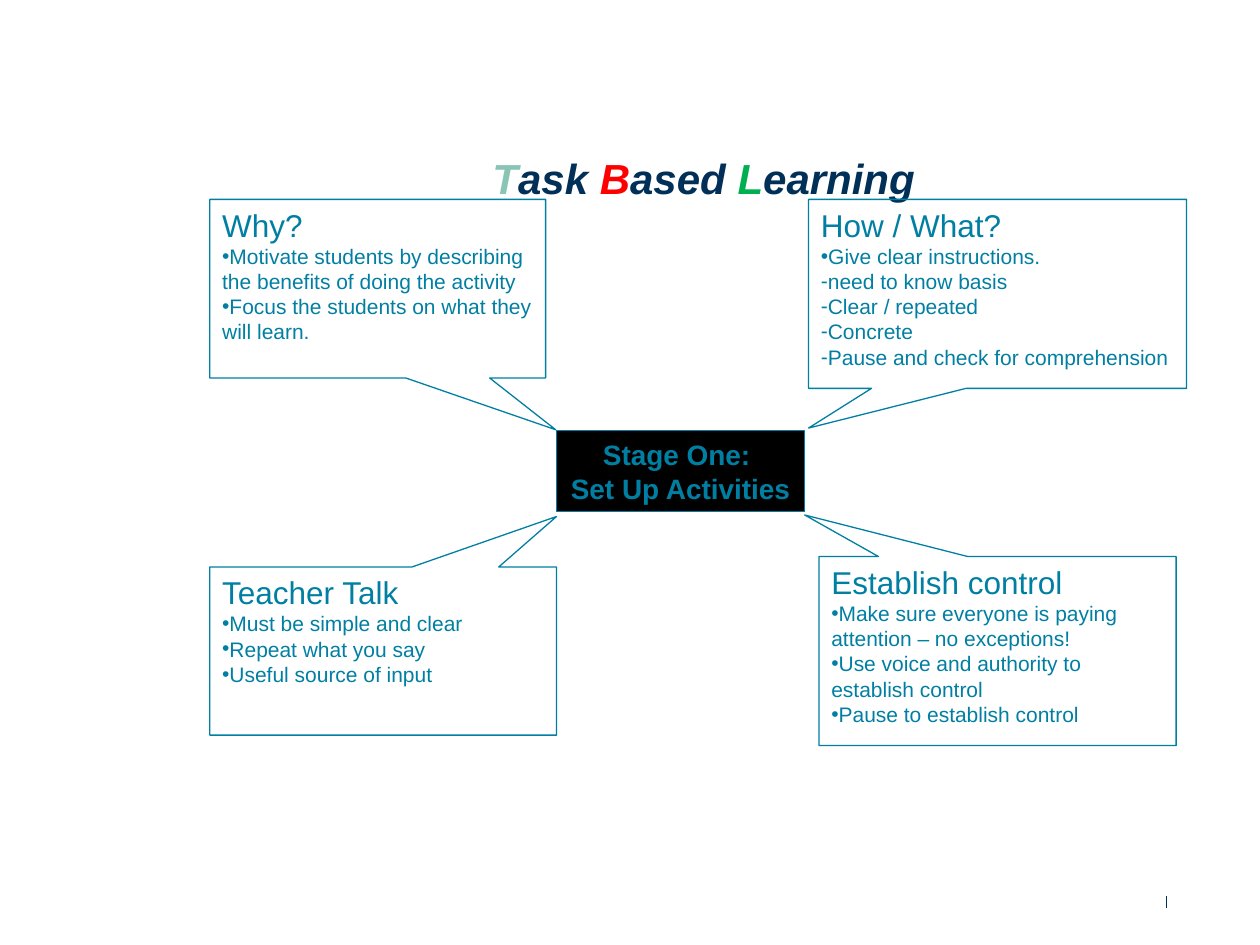
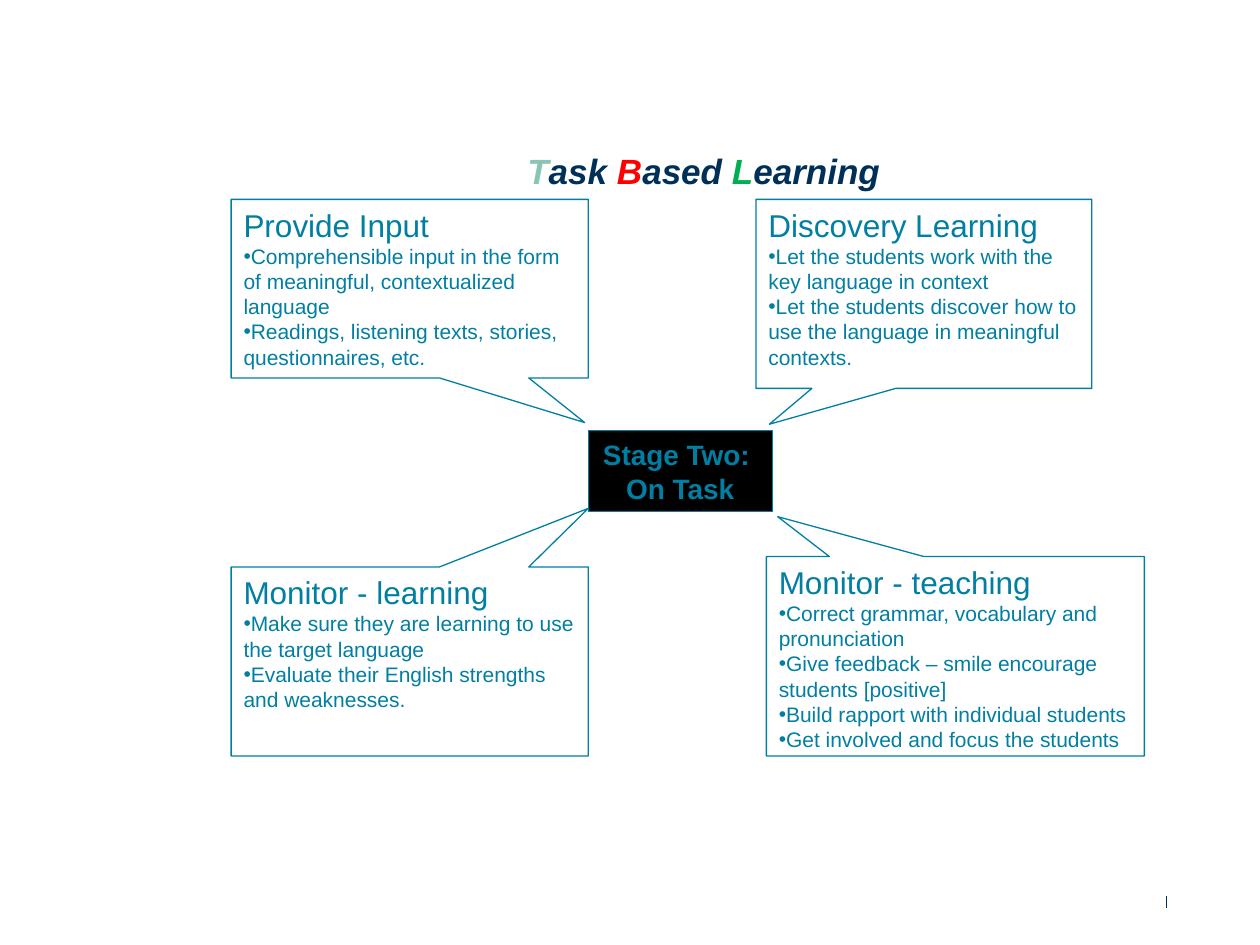
from dataclasses import dataclass

from lxml import etree
from pptx import Presentation
from pptx import util as u
from pptx.dml.color import RGBColor
from pptx.enum import shapes, text
from pptx.oxml.ns import qn


@dataclass(frozen=True)
class Theme:
    font: str = "Arial"
    teal: str = "007FA3"
    navy: str = "003057"
    mint: str = "89C5B5"
    red: str = "FF0000"
    green: str = "00B050"
    black: str = "000000"
    heading_size: int = 18
    item_size: int = 12
    stage_size: int = 16
    title_leading: int = 40
    body_leading: float = 1.0
    outline: float = 0.75
    hairline: float = 0.5


@dataclass
class Callout:
    """A speech box; frame is left, top, width, height in cm, each item opens with its bullet."""
    frame: tuple
    pointer: tuple
    heading: str
    items: list


def color(value):
    return RGBColor.from_string(value)


def cm(*lengths):
    return [u.Cm(length) for length in lengths]


class SlideBuilder:
    def __init__(self, deck, theme):
        self.deck = deck
        self.theme = theme
        self.page = None

    def new_page(self, title_top, title_size):
        self.page = self.deck.slides.add_slide(self.deck.slide_layouts[5])
        self.footer_mark()
        self.title(title_top, title_size)

    def footer_mark(self):
        mark = self.page.shapes.add_connector(
            shapes.MSO_CONNECTOR.STRAIGHT, *cm(23.52, 18.06, 23.52, 18.31))
        mark.line.color.rgb = color(self.theme.navy)
        mark.line.width = u.Pt(self.theme.hairline)
        etree.SubElement(mark._element.spPr, qn("a:effectLst"))

    def title(self, top, size):
        theme = self.theme
        box = self.page.shapes.title
        box.left, box.top, box.width, box.height = cm(2.97, top, 22.43, 1.57)
        frame = box.text_frame
        frame.auto_size = text.MSO_AUTO_SIZE.NONE
        frame.vertical_anchor = text.MSO_ANCHOR.TOP
        frame.margin_left = frame.margin_right = 0
        frame.margin_top = frame.margin_bottom = 0
        para = frame.paragraphs[0]
        para.alignment = text.PP_ALIGN.CENTER
        para.line_spacing = u.Pt(theme.title_leading)
        for initial, rest, accent in (("T", "ask ", theme.mint),
                                      ("B", "ased ", theme.red),
                                      ("L", "earning", theme.green)):
            self.span(para, initial, size, accent, bold=True, italic=True)
            self.span(para, rest, size, theme.navy, bold=True, italic=True)

    def span(self, para, words, size, ink, bold=False, italic=False):
        span = para.add_run()
        span.text = words
        span.font.name = self.theme.font
        span.font.size = u.Pt(size)
        span.font.bold = bold
        span.font.italic = italic
        span.font.color.rgb = color(ink)

    def box(self, kind, frame, fill=None):
        box = self.page.shapes.add_shape(kind, *cm(*frame))
        box.shadow.inherit = False
        if fill:
            box.fill.solid()
            box.fill.fore_color.rgb = color(fill)
        else:
            box.fill.background()
        box.line.color.rgb = color(self.theme.teal)
        box.line.width = u.Pt(self.theme.outline)
        return box

    def paragraph(self, frame, first, alignment, bullet=None):
        para = frame.paragraphs[0] if first else frame.add_paragraph()
        if bullet:
            properties = para._p.get_or_add_pPr()
            properties.set("marL", "0")
            properties.set("indent", "0")
            etree.SubElement(properties, qn("a:buFont"), typeface=self.theme.font)
            etree.SubElement(properties, qn("a:buChar"), char=bullet)
        para.alignment = alignment
        para.line_spacing = self.theme.body_leading
        return para

    def stage(self, left, width, lines):
        """Black label in the middle that the callouts point to."""
        box = self.box(shapes.MSO_SHAPE.RECTANGLE, (left, 8.68, width, 1.64),
                       self.theme.black)
        frame = box.text_frame
        frame.word_wrap = False
        frame.vertical_anchor = text.MSO_ANCHOR.MIDDLE
        for index, line in enumerate(lines):
            para = self.paragraph(frame, index == 0, text.PP_ALIGN.CENTER)
            self.span(para, line, self.theme.stage_size, self.theme.teal, bold=True)

    def callout(self, callout):
        theme = self.theme
        box = self.box(shapes.MSO_SHAPE.RECTANGULAR_CALLOUT, callout.frame)
        box.adjustments[0], box.adjustments[1] = callout.pointer
        frame = box.text_frame
        frame.word_wrap = True
        frame.vertical_anchor = text.MSO_ANCHOR.TOP
        para = self.paragraph(frame, True, text.PP_ALIGN.LEFT)
        self.span(para, callout.heading, theme.heading_size, theme.teal)
        for item in callout.items:
            para = self.paragraph(frame, False, text.PP_ALIGN.LEFT, item[0])
            self.span(para, item[1:], theme.item_size, theme.teal)


UPPER, LOWER_LEFT, LOWER_RIGHT = 4.02, 11.43, 11.22

SET_UP = [
    Callout((4.23, UPPER, 6.77, 3.6), (0.53, 0.79), "Why?", [
        "•Motivate students by describing the benefits of doing the activity",
        "•Focus the students on what they will learn."]),
    Callout((16.3, UPPER, 7.62, 3.81), (-0.5, 0.71), "How / What?", [
        "•Give clear instructions.",
        "-need to know basis",
        "-Clear / repeated",
        "-Concrete",
        "-Pause and check for comprehension"]),
    Callout((4.23, LOWER_LEFT, 6.99, 3.39), (0.5, -0.8), "Teacher Talk", [
        "•Must be simple and clear",
        "•Repeat what you say",
        "•Useful source of input"]),
    Callout((16.51, LOWER_RIGHT, 7.2, 3.81), (-0.54, -0.72), "Establish control", [
        "•Make sure everyone is paying attention – no exceptions!",
        "•Use voice and authority to establish control",
        "•Pause to establish control"]),
]

ON_TASK = [
    Callout((4.66, UPPER, 7.2, 3.6), (0.49, 0.75), "Provide Input", [
        "•Comprehensible input in the form of meaningful, contextualized language",
        "•Readings, listening texts, stories, questionnaires, etc."]),
    Callout((15.24, UPPER, 6.77, 3.81), (-0.46, 0.69), "Discovery Learning", [
        "•Let the students work with the key language in context",
        "•Let the students discover how to use the language in meaningful contexts."]),
    Callout((4.66, LOWER_LEFT, 7.2, 3.81), (0.5, -0.81), "Monitor - learning", [
        "•Make sure they are learning to use the target language",
        "•Evaluate their English strengths and weaknesses."]),
    Callout((15.45, LOWER_RIGHT, 7.62, 4.02), (-0.47, -0.7), "Monitor - teaching", [
        "•Correct grammar, vocabulary and pronunciation",
        "•Give feedback – smile encourage students [positive]",
        "•Build rapport with individual students",
        "•Get involved and focus the students"]),
]


def main():
    deck = Presentation()
    deck.slide_width, deck.slide_height = cm(25.4, 19.05)
    builder = SlideBuilder(deck, Theme())

    builder.new_page(title_top=2.67, title_size=24)
    builder.stage(11.22, 5, ["Stage One: ", "Set Up Activities"])
    for callout in SET_UP:
        builder.callout(callout)

    builder.new_page(title_top=2.45, title_size=20)
    builder.stage(11.86, 3.71, ["Stage Two: ", "On Task"])
    for callout in ON_TASK:
        builder.callout(callout)

    deck.save("out.pptx")


if __name__ == "__main__":
    main()
